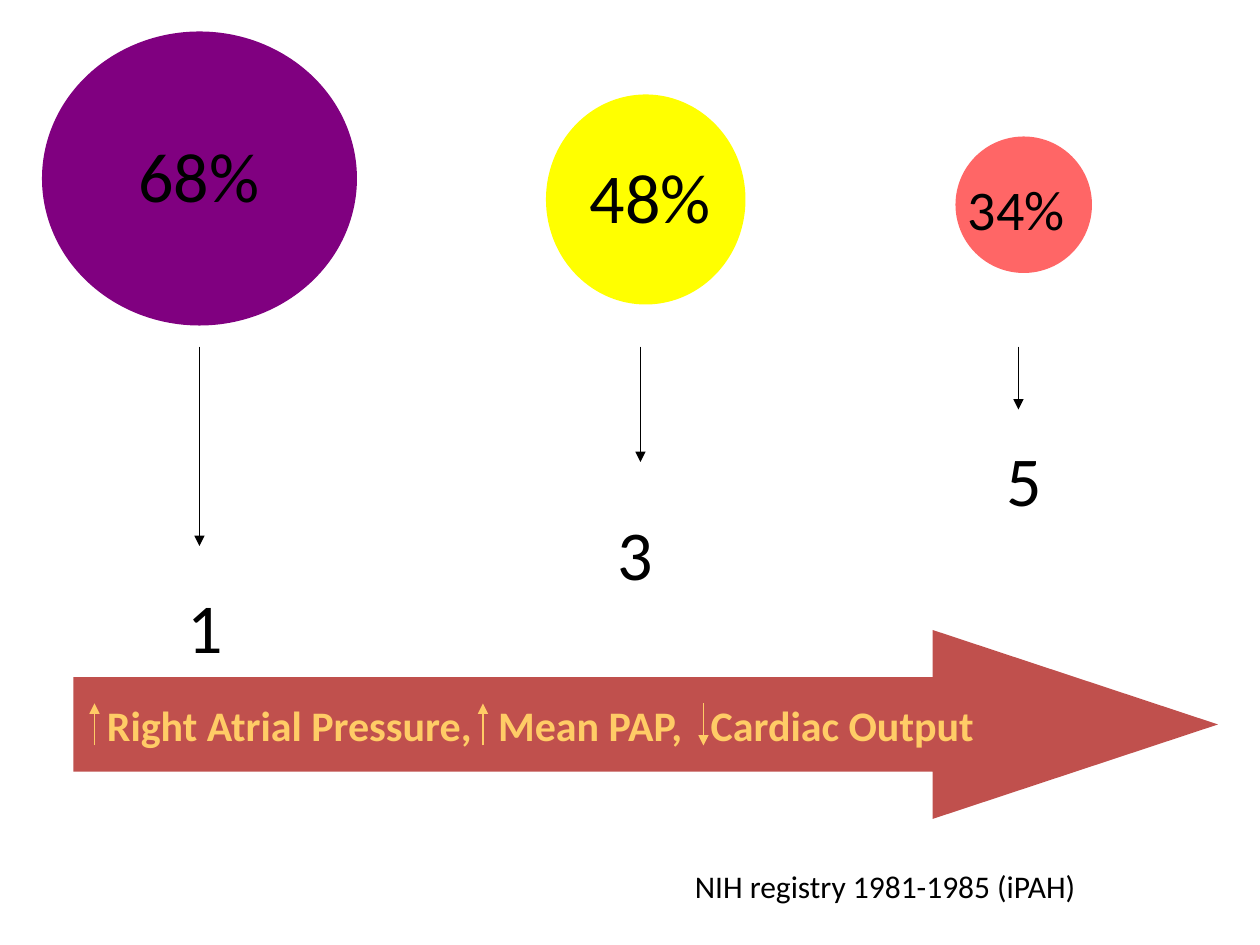
from pptx import Presentation
from pptx.dml.color import RGBColor
from pptx.enum.shapes import MSO_CONNECTOR, MSO_SHAPE
from pptx.enum.text import MSO_AUTO_SIZE, PP_ALIGN
from pptx.oxml.ns import qn
from pptx.util import Pt
from lxml import etree

OVAL, RIGHT_ARROW = MSO_SHAPE.OVAL, MSO_SHAPE.RIGHT_ARROW
STRAIGHT = MSO_CONNECTOR.STRAIGHT
LEFT, CENTER = PP_ALIGN.LEFT, PP_ALIGN.CENTER
GROW = MSO_AUTO_SIZE.SHAPE_TO_FIT_TEXT

BLACK = RGBColor(0x00, 0x00, 0x00)
PURPLE = RGBColor(0x80, 0x00, 0x80)
YELLOW = RGBColor(0xFF, 0xFF, 0x00)
CORAL = RGBColor(0xFF, 0x66, 0x66)
BRICK = RGBColor(0xC0, 0x50, 0x4D)
GOLD = RGBColor(0xFF, 0xCC, 0x66)

BLANK_LAYOUT = 6
ARROWS_TOP = 198
PERCENT_WIDTH, YEAR_WIDTH = 126, 114

# circle (left, top, width, height), colour, percentage, its place and size,
# arrow x, arrow end, years, their place
SURVIVAL = [
    ((24, 18, 180, 168), PURPLE, "68%", (72, 72), 40, 114, 312, "1", (60, 330)),
    ((312, 54, 114, 120), YELLOW, "48%", (330, 84), 40, 366, 264, "3", (306, 288)),
    ((546, 78, 78, 78), CORAL, "34%", (546, 96), 32, 582, 234, "5", (528, 246)),
]

# x, start y, end y of the small trend arrows
TRENDS = [(54, 426, 402), (276, 426, 402), (402, 402, 426)]


class SlideBuilder:
    """Draws elements on one slide; all lengths are in points."""

    font_name = "Calibri"
    line_width = 0.75

    def __init__(self, slide):
        self.slide = slide

    def shape(self, kind, frame, color):
        shape = self.slide.shapes.add_shape(kind, *map(Pt, frame))
        shape.shadow.inherit = False
        shape.fill.solid()
        shape.fill.fore_color.rgb = color
        shape.line.fill.background()
        return shape

    def text(self, words, place, width, size, color=BLACK, bold=False,
             align=LEFT, tabs=()):
        height = size * 1.2 + 7.2
        box = self.slide.shapes.add_textbox(*map(Pt, (*place, width, height)))
        frame = box.text_frame
        frame.word_wrap = True
        frame.auto_size = GROW
        para = frame.paragraphs[0]
        para.alignment = align
        if tabs:
            tab_list = etree.SubElement(para._p.get_or_add_pPr(), qn("a:tabLst"))
            for position in tabs:
                etree.SubElement(tab_list, qn("a:tab"), pos=str(Pt(position)), algn="l")
        span = para.add_run()
        span.text = words
        style = {"name": self.font_name, "size": Pt(size), "bold": bold}
        for name, value in style.items():
            setattr(span.font, name, value)
        span.font.color.rgb = color

    def vertical_arrow(self, x, start, end, color=BLACK):
        arrow = self.slide.shapes.add_connector(
            STRAIGHT, *map(Pt, (x, start, x, end)))
        arrow.line.color.rgb = color
        arrow.line.width = Pt(self.line_width)
        etree.SubElement(arrow.line._get_or_add_ln(), qn("a:tailEnd"), type="triangle")
        etree.SubElement(arrow._element.spPr, qn("a:effectLst"))


def main():
    deck = Presentation()
    deck.slide_width, deck.slide_height = Pt(720), Pt(540)
    page = SlideBuilder(deck.slides.add_slide(deck.slide_layouts[BLANK_LAYOUT]))

    for (circle, color, percent, percent_place, size,
         arrow_x, arrow_end, years, years_place) in SURVIVAL:
        page.shape(OVAL, circle, color)
        page.text(percent, percent_place, PERCENT_WIDTH, size)
        page.vertical_arrow(arrow_x, ARROWS_TOP, arrow_end)
        page.text(years, years_place, YEAR_WIDTH, 40, align=CENTER)

    page.text("NIH registry 1981-1985 (iPAH)", (390, 492), 330, 18)

    band = page.shape(RIGHT_ARROW, (42, 360, 654, 108), BRICK)
    band.adjustments[0] = 0.5
    band.adjustments[1] = 1.51
    page.text("Right Atrial Pressure,\tMean PAP,\tCardiac Output", (54, 396), 636,
              24, GOLD, bold=True, tabs=(223.5, 345))
    for x, start, end in TRENDS:
        page.vertical_arrow(x, start, end, GOLD)

    deck.save("out.pptx")


if __name__ == "__main__":
    main()
